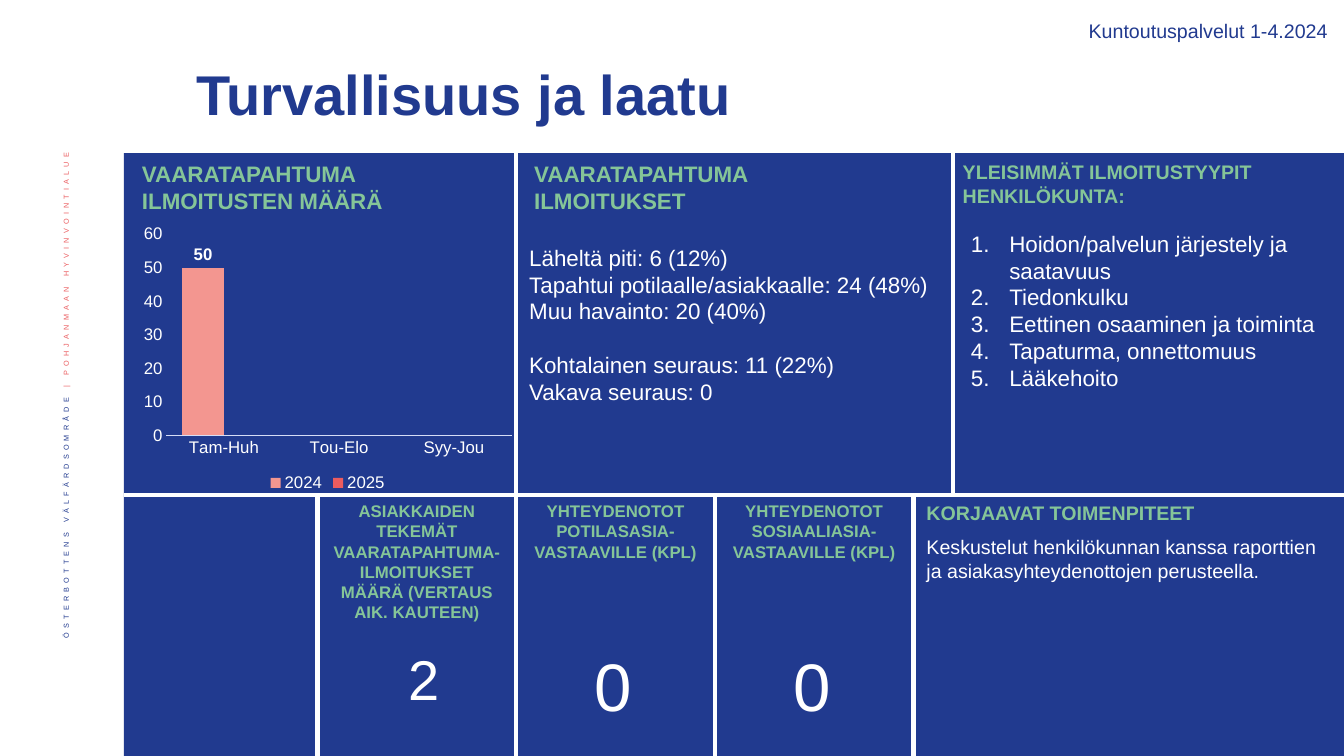
"""Build the safety and quality dashboard slide."""
from lxml import etree
from pptx import Presentation
from pptx.chart.data import CategoryChartData
from pptx.dml.color import RGBColor
from pptx.enum.chart import XL_CHART_TYPE, XL_LABEL_POSITION, XL_LEGEND_POSITION, XL_TICK_MARK
from pptx.enum.shapes import MSO_CONNECTOR, MSO_SHAPE
from pptx.enum.text import MSO_ANCHOR, MSO_AUTO_SIZE, PP_ALIGN
from pptx.oxml.ns import qn
from pptx.util import Pt

EMU_PER_PX = 9144
FONT = "Arial"
NAVY = RGBColor(0x21, 0x3A, 0x8F)
GREEN = RGBColor(0x85, 0xC5, 0x98)
CORAL = RGBColor(0xEB, 0x5C, 0x5F)
SALMON = RGBColor(0xF3, 0x96, 0x90)
PALE_BLUE = RGBColor(0xD6, 0xDD, 0xF6)
WHITE = RGBColor(0xFF, 0xFF, 0xFF)

LEFT, CENTER, RIGHT = PP_ALIGN.LEFT, PP_ALIGN.CENTER, PP_ALIGN.RIGHT
MIDDLE, TOP = MSO_ANCHOR.MIDDLE, MSO_ANCHOR.TOP
NO_AUTOFIT = MSO_AUTO_SIZE.NONE
RECTANGLE, STRAIGHT = MSO_SHAPE.RECTANGLE, MSO_CONNECTOR.STRAIGHT
CLUSTERED = XL_CHART_TYPE.COLUMN_CLUSTERED
LEGEND_BOTTOM = XL_LEGEND_POSITION.BOTTOM
OUTSIDE_END = XL_LABEL_POSITION.OUTSIDE_END
NO_TICK = XL_TICK_MARK.NONE

SLIDE_W, SLIDE_H = 1333, 750
PANEL_X, PANEL_Y, SPLIT_Y = 123, 152, 491
UPPER_SPLITS = (512, 945)
LOWER_SPLITS = tuple(315 + 197 * i for i in range(4))


def px(length):
    """Turn a length in px into EMU."""
    return length * EMU_PER_PX


def set_font(font, size, color, bold=False):
    """Set the typeface, size, colour and weight of a font."""
    font.name, font.size, font.bold = FONT, Pt(size), bold
    font.color.rgb = color


def write(frame, text, size=16, color=WHITE, bold=False, align=LEFT,
          anchor=TOP, spacing=None):
    """Fill a text frame with one paragraph for each line of text."""
    frame.word_wrap = True
    frame.auto_size = NO_AUTOFIT
    frame.vertical_anchor = anchor
    frame.text = text
    for paragraph in frame.paragraphs:
        paragraph.alignment = align
        paragraph.line_spacing = spacing
        set_font(paragraph.runs[0].font, size, color, bold)
    return frame


def add_text(slide, box, text, **style):
    """Add a formatted text box."""
    return write(slide.shapes.add_textbox(*map(px, box)).text_frame, text, **style)


def place_placeholder(slide, placeholder, box, text, **style):
    """Move a placeholder to its box, in front of the panel, and fill it."""
    placeholder.left, placeholder.top, placeholder.width, placeholder.height = map(px, box)
    slide.shapes._spTree.append(placeholder._element)
    return write(placeholder.text_frame, text, **style)


def add_divider(slide, start, end):
    """Add a white line between two points."""
    divider = slide.shapes.add_connector(STRAIGHT, *map(px, start + end))
    divider.line.color.rgb = WHITE
    divider.line.width = Pt(3)
    etree.SubElement(divider._element.spPr, qn("a:effectLst"))


def build_panel(slide, box):
    """Draw the navy panel and the lines that split it into cells."""
    left, top, width, height = box
    panel = slide.shapes.add_shape(RECTANGLE, *map(px, box))
    panel.shadow.inherit = False
    panel.fill.solid()
    panel.fill.fore_color.rgb = NAVY
    panel.line.fill.background()
    add_divider(slide, (left, SPLIT_Y), (left + width, SPLIT_Y))
    for x in UPPER_SPLITS:
        add_divider(slide, (x, top), (x, SPLIT_Y))
    for x in LOWER_SPLITS:
        add_divider(slide, (x, SPLIT_Y), (x, top + height))


def build_sidebar(slide, box):
    """Write the bilingual organisation name up the left margin."""
    frame = add_text(slide, box, "ÖSTERBOTTENS VÄLFÄRDSOMRÅDE ", size=9, color=NAVY,
                     align=RIGHT, anchor=MIDDLE, spacing=0.9)
    frame._txBody.bodyPr.set("vert", "vert270")
    paragraph = frame.paragraphs[0]
    finnish_name = paragraph.add_run()
    finnish_name.text = "| POHJANMAAN HYVINVOINTIALUE"
    set_font(finnish_name.font, 9, CORAL)
    for run in paragraph.runs:
        properties = run._r.get_or_add_rPr()
        properties.set("baseline", "30000")
        properties.set("spc", "300")


def build_header(slide, box):
    """Place the slide title and the reporting period."""
    left, top, width, _ = box
    place_placeholder(slide, slide.shapes.title, (left + 62, top + 47, 998, 99),
                      "Turvallisuus ja laatu", size=40, color=NAVY, bold=True,
                      anchor=MIDDLE, spacing=0.9)
    add_text(slide, (left + width - 327, top + 14, 321, 34),
             "Kuntoutuspalvelut 1-4.2024", size=14, color=NAVY, align=RIGHT)


def build_count_chart(slide, box):
    """Chart the number of incident reports by four-month period."""
    left, top, width, height = box
    add_text(slide, (left + 8, top + 2, 270, 64), "VAARATAPAHTUMA ILMOITUSTEN MÄÄRÄ",
             color=GREEN, bold=True)
    report_counts = CategoryChartData()
    report_counts.categories = ["Tam-Huh", "Tou-Elo", "Syy-Jou"]
    report_counts.add_series("2024", (50, None, None))
    report_counts.add_series("2025", (None, None, None))
    chart_box = (left + 12, top + 66, width - 9, height - 65)
    chart = slide.shapes.add_chart(CLUSTERED, *map(px, chart_box), report_counts).chart
    set_font(chart.font, 12, WHITE)
    chart.has_title = False
    chart.has_legend = True
    chart.legend.position = LEGEND_BOTTOM
    chart.legend.include_in_layout = False
    set_font(chart.legend.font, 12, WHITE)

    periods, counts = chart.category_axis, chart.value_axis
    for axis in (periods, counts):
        axis.major_tick_mark = axis.minor_tick_mark = NO_TICK
        axis.has_major_gridlines = False
        set_font(axis.tick_labels.font, 12, WHITE)
    periods.format.line.color.rgb = PALE_BLUE
    periods.format.line.width = Pt(0.75)
    counts.format.line.fill.background()
    counts.minimum_scale, counts.maximum_scale, counts.major_unit = 0, 60, 10

    plot = chart.plots[0]
    plot.gap_width, plot.overlap, plot.vary_by_categories = 75, 0, False
    for year, color in zip(plot.series, (SALMON, CORAL)):
        year.format.fill.solid()
        year.format.fill.fore_color.rgb = color
        labels = year.data_labels
        labels.show_value = True
        labels.position = OUTSIDE_END
        set_font(labels.font, 12, WHITE, bold=True)


def build_severity(slide, box):
    """List the incident reports by kind and by consequence."""
    left, top, _, _ = box
    add_text(slide, (left + 8, top + 2, 270, 64), "VAARATAPAHTUMA ILMOITUKSET",
             color=GREEN, bold=True)
    findings = add_text(slide, (left + 3, top + 85, 419, 172),
                        "Läheltä piti: 6 (12%)\n"
                        "Tapahtui potilaalle/asiakkaalle: 24 (48%)\n"
                        "Muu havainto: 20 (40%)\n"
                        "Kohtalainen seuraus: 11 (22%)\n"
                        "Vakava seuraus: 0")
    findings.paragraphs[3].space_before = Pt(19)


def build_report_types(slide, box):
    """Number the most common report types."""
    left, top, width, _ = box
    add_text(slide, (left, top + 2, width, 57), "YLEISIMMÄT ILMOITUSTYYPIT HENKILÖKUNTA:",
             size=14, color=GREEN, bold=True)
    report_types = place_placeholder(
        slide, slide.placeholders[1], (left + 8, top + 71, 374, 172),
        "Hoidon/palvelun järjestely ja saatavuus\nTiedonkulku\n"
        "Eettinen osaaminen ja toiminta\nTapaturma, onnettomuus\nLääkehoito")
    for paragraph in report_types.paragraphs:
        paragraph.space_before = Pt(0)
        properties = paragraph._p.get_or_add_pPr()
        properties.set("marL", str(px(38)))
        properties.set("indent", str(px(-38)))
        etree.SubElement(properties, qn("a:buFont"), typeface="+mj-lt")
        etree.SubElement(properties, qn("a:buAutoNum"), type="arabicPeriod")


def build_indicator(slide, box, label, value, size, shift):
    """Show one key figure under its label."""
    left, top, width, _ = box
    add_text(slide, (left + 3, top + 1, width - 6, 131), label, size=12, color=GREEN,
             bold=True, align=CENTER)
    add_text(slide, (left + shift, top + 143, width, 91), value, size=size, align=CENTER)


def build_actions(slide, box):
    """Describe the corrective actions."""
    left, top, _, _ = box
    add_text(slide, (left + 3, top + 1, 419, 34), "KORJAAVAT TOIMENPITEET",
             size=14, color=GREEN, bold=True)
    add_text(slide, (left + 3, top + 35, 419, 88),
             "Keskustelut henkilökunnan kanssa raporttien ja asiakasyhteydenottojen perusteella.",
             size=14)


def main():
    """Assemble and save the slide."""
    deck = Presentation()
    deck.slide_width, deck.slide_height = px(SLIDE_W), px(SLIDE_H)
    slide = deck.slides.add_slide(deck.slide_layouts[1])
    upper_h, lower_h = SPLIT_Y - PANEL_Y, SLIDE_H - SPLIT_Y
    middle_x, right_x = UPPER_SPLITS

    build_panel(slide, (PANEL_X, PANEL_Y, SLIDE_W - PANEL_X, SLIDE_H - PANEL_Y))
    build_sidebar(slide, (42, 142, 52, 573))
    build_header(slide, (PANEL_X, 0, SLIDE_W - PANEL_X, PANEL_Y))
    build_count_chart(slide, (PANEL_X, PANEL_Y, middle_x - PANEL_X, upper_h))
    build_severity(slide, (middle_x, PANEL_Y, right_x - middle_x, upper_h))
    build_report_types(slide, (right_x, PANEL_Y, SLIDE_W - right_x, upper_h))
    indicators = (
        ("ASIAKKAIDEN TEKEMÄT VAARATAPAHTUMA-ILMOITUKSET MÄÄRÄ (VERTAUS AIK. KAUTEEN)",
         "2", 40, 7),
        ("YHTEYDENOTOT POTILASASIA-VASTAAVILLE (KPL)", "0", 48, -2),
        ("YHTEYDENOTOT SOSIAALIASIA-VASTAAVILLE (KPL)", "0", 48, -2),
    )
    for x, indicator in zip(LOWER_SPLITS, indicators):
        build_indicator(slide, (x, SPLIT_Y, 197, lower_h), *indicator)
    actions_x = LOWER_SPLITS[-1]
    build_actions(slide, (actions_x, SPLIT_Y, SLIDE_W - actions_x, lower_h))
    deck.save("out.pptx")


if __name__ == "__main__":
    main()
